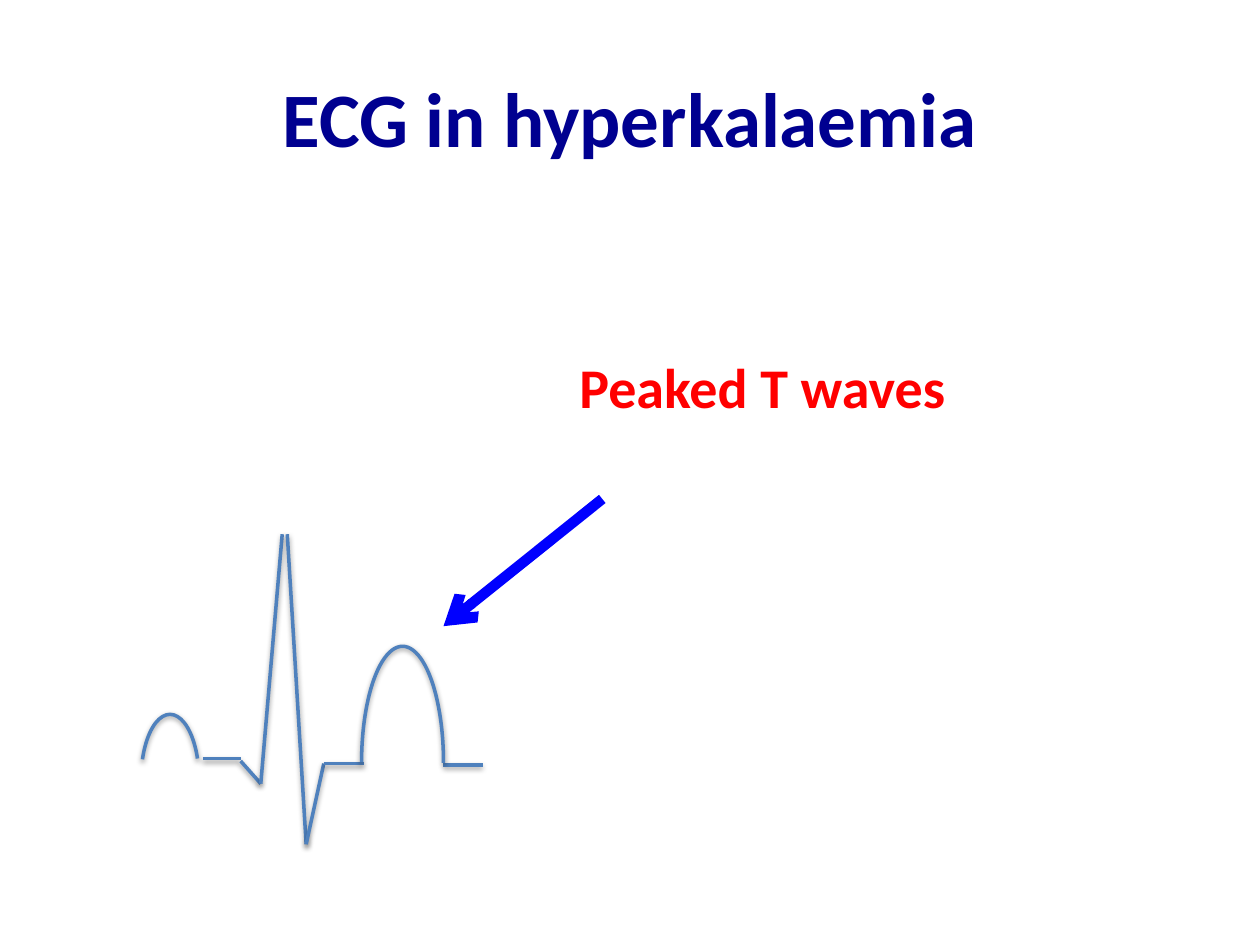
from typing import NamedTuple

from lxml.etree import SubElement
from pptx import Presentation
from pptx.dml.color import RGBColor
from pptx.enum.shapes import MSO_CONNECTOR, MSO_SHAPE
from pptx.enum.text import MSO_ANCHOR, PP_ALIGN
from pptx.oxml.ns import qn
from pptx.util import Inches, Pt

NAVY = RGBColor(0x00, 0x00, 0x90)
RED = RGBColor(0xFF, 0x00, 0x00)
BLUE = RGBColor(0x00, 0x00, 0xFF)
TRACE_BLUE = RGBColor(0x4F, 0x81, 0xBD)

# The slide is a grid of 100 columns by 75 rows.
COLUMNS, ROWS = 100, 75
CELL = Inches(0.1)


class Point(NamedTuple):
    column: float
    row: float


class Box(NamedTuple):
    column: float
    row: float
    columns: float
    rows: float


class Label(NamedTuple):
    text: str
    box: Box
    size: int
    color: RGBColor
    alignment: PP_ALIGN
    anchor: MSO_ANCHOR


class Wave(NamedTuple):
    box: Box
    start_degrees: float
    end_degrees: float


LABELS = [
    Label("ECG in hyperkalaemia", Box(5, 3, 90, 12.5), 44, NAVY, PP_ALIGN.CENTER, MSO_ANCHOR.MIDDLE),
    Label("Peaked T waves", Box(45, 27.5, 50, 6.4), 32, RED, PP_ALIGN.LEFT, MSO_ANCHOR.TOP),
]

Q_DIP = Point(20.7, 62.2)
S_DIP = Point(24.3, 67)
ST_START = Point(25.7, 60.6)
TRACE_SEGMENTS = [
    (Point(16.1, 60.2), Point(19.1, 60.2)),
    (Point(19.1, 60.4), Q_DIP),
    (Q_DIP, Point(22.4, 42.4)),
    (S_DIP, Point(22.8, 42.4)),
    (S_DIP, ST_START),
    (ST_START, Point(28.9, 60.6)),
    (Point(35.2, 60.7), Point(38.3, 60.7)),
]
P_WAVE = Wave(Box(11.2, 56.7, 4.6, 10.3), 217, 324.2)
T_WAVE = Wave(Box(28.7, 51.3, 6.5, 18.4), 178.9, 0)
ARROW = (Point(47.8, 39.6), Point(35.2, 49.7))


def grid(*lengths: float) -> list[int]:
    return [round(length * CELL) for length in lengths]


def style_line(shape, color: RGBColor, width: float, shadow: bool) -> None:
    shape.line.color.rgb = color
    shape.line.width = Pt(width)
    effects = SubElement(shape._element.spPr, qn("a:effectLst"))
    if shadow:
        outer = SubElement(effects, qn("a:outerShdw"), blurRad=str(Pt(3.1)), dist=str(Pt(1.6)),
                           dir="5400000", rotWithShape="0")
        black = SubElement(outer, qn("a:srgbClr"), val="000000")
        SubElement(black, qn("a:alpha"), val="38000")


def add_label(slide, label: Label) -> None:
    frame = slide.shapes.add_textbox(*grid(*label.box)).text_frame
    frame.word_wrap = True
    frame.vertical_anchor = label.anchor
    paragraph = frame.paragraphs[0]
    paragraph.text = label.text
    paragraph.alignment = label.alignment
    paragraph.font.name = "Calibri"
    paragraph.font.size = Pt(label.size)
    paragraph.font.bold = True
    paragraph.font.color.rgb = label.color


def add_line(slide, start: Point, end: Point, color: RGBColor, width: float, shadow: bool):
    connector = slide.shapes.add_connector(MSO_CONNECTOR.STRAIGHT, *grid(*start, *end))
    style_line(connector, color, width, shadow)
    return connector


def add_wave(slide, wave: Wave) -> None:
    """Draw an arc, mirrored left to right."""
    arc = slide.shapes.add_shape(MSO_SHAPE.ARC, *grid(*wave.box))
    for index, degrees in enumerate((wave.start_degrees, wave.end_degrees)):
        arc.adjustments[index] = degrees * 0.6  # 60000ths of a degree, in units of 100000
    arc._element.spPr.find(qn("a:xfrm")).set("flipH", "1")
    arc.fill.background()
    style_line(arc, TRACE_BLUE, 2, shadow=True)


def main() -> None:
    presentation = Presentation()
    presentation.slide_width = COLUMNS * CELL
    presentation.slide_height = ROWS * CELL
    slide = presentation.slides.add_slide(presentation.slide_layouts[6])

    for label in LABELS:
        add_label(slide, label)
    for start, end in TRACE_SEGMENTS:
        add_line(slide, start, end, TRACE_BLUE, 2, shadow=True)
    for wave in (T_WAVE, P_WAVE):
        add_wave(slide, wave)
    arrow = add_line(slide, *ARROW, BLUE, 6, shadow=False)
    SubElement(arrow.line._get_or_add_ln(), qn("a:tailEnd"), type="arrow")

    presentation.save("out.pptx")


if __name__ == "__main__":
    main()
